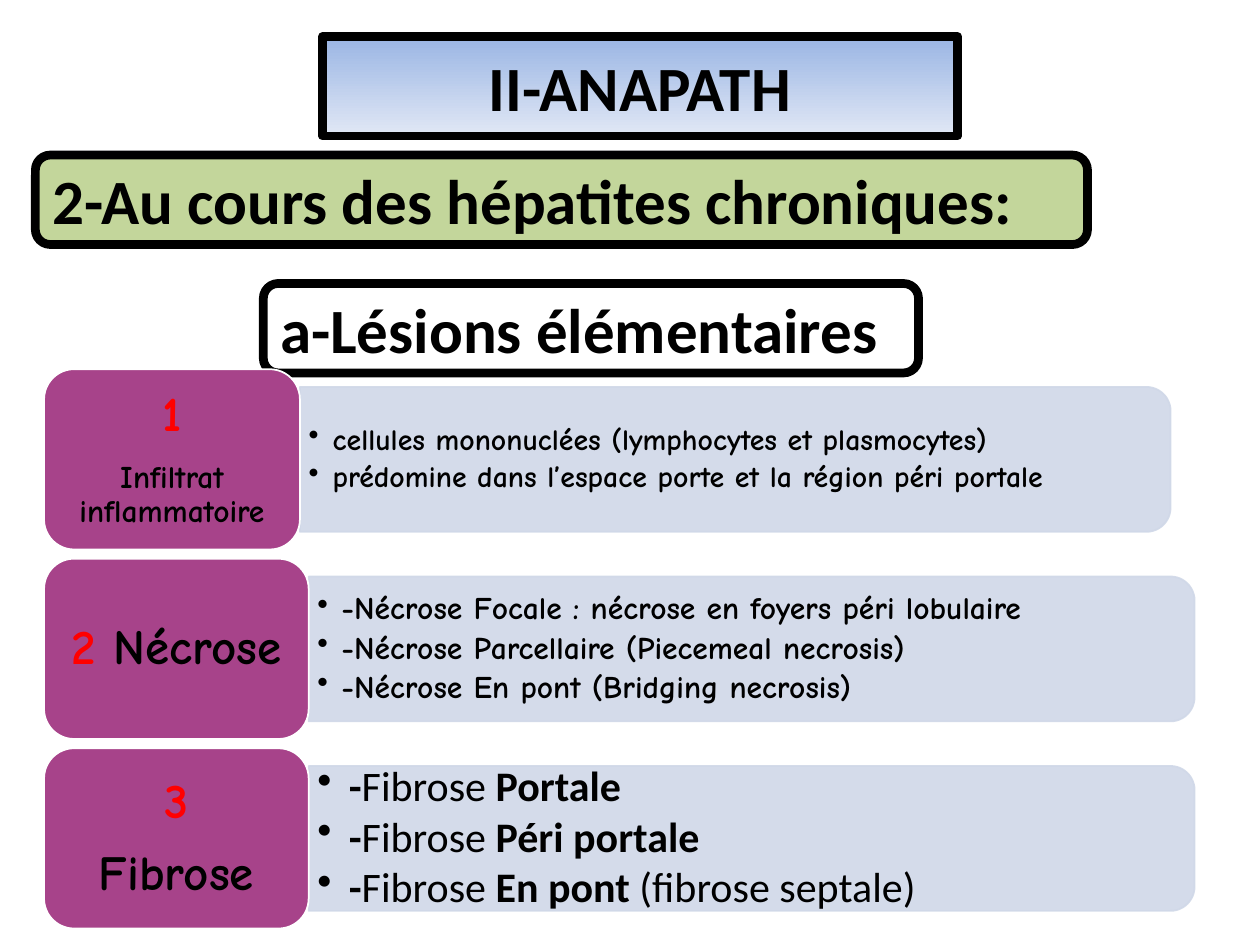
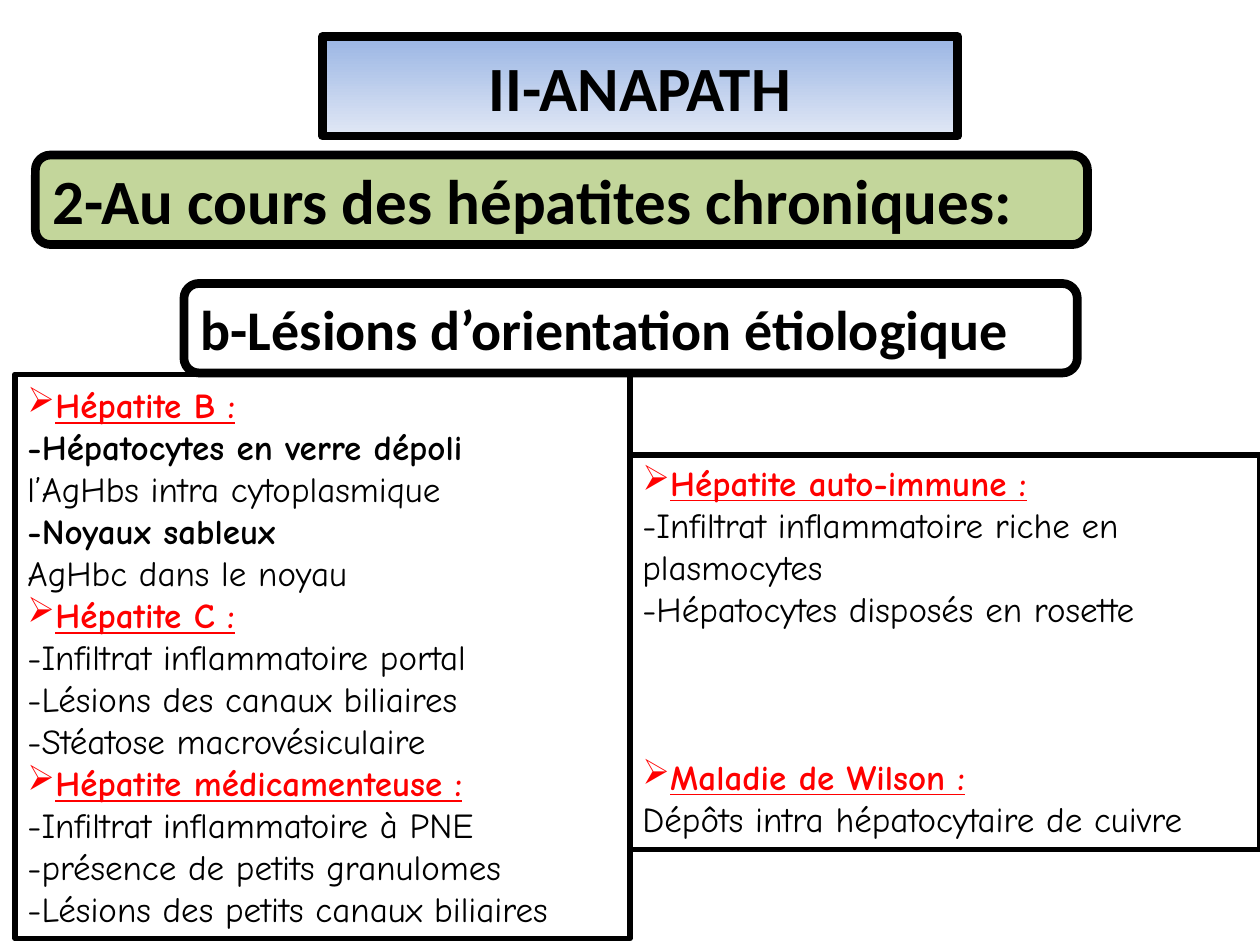
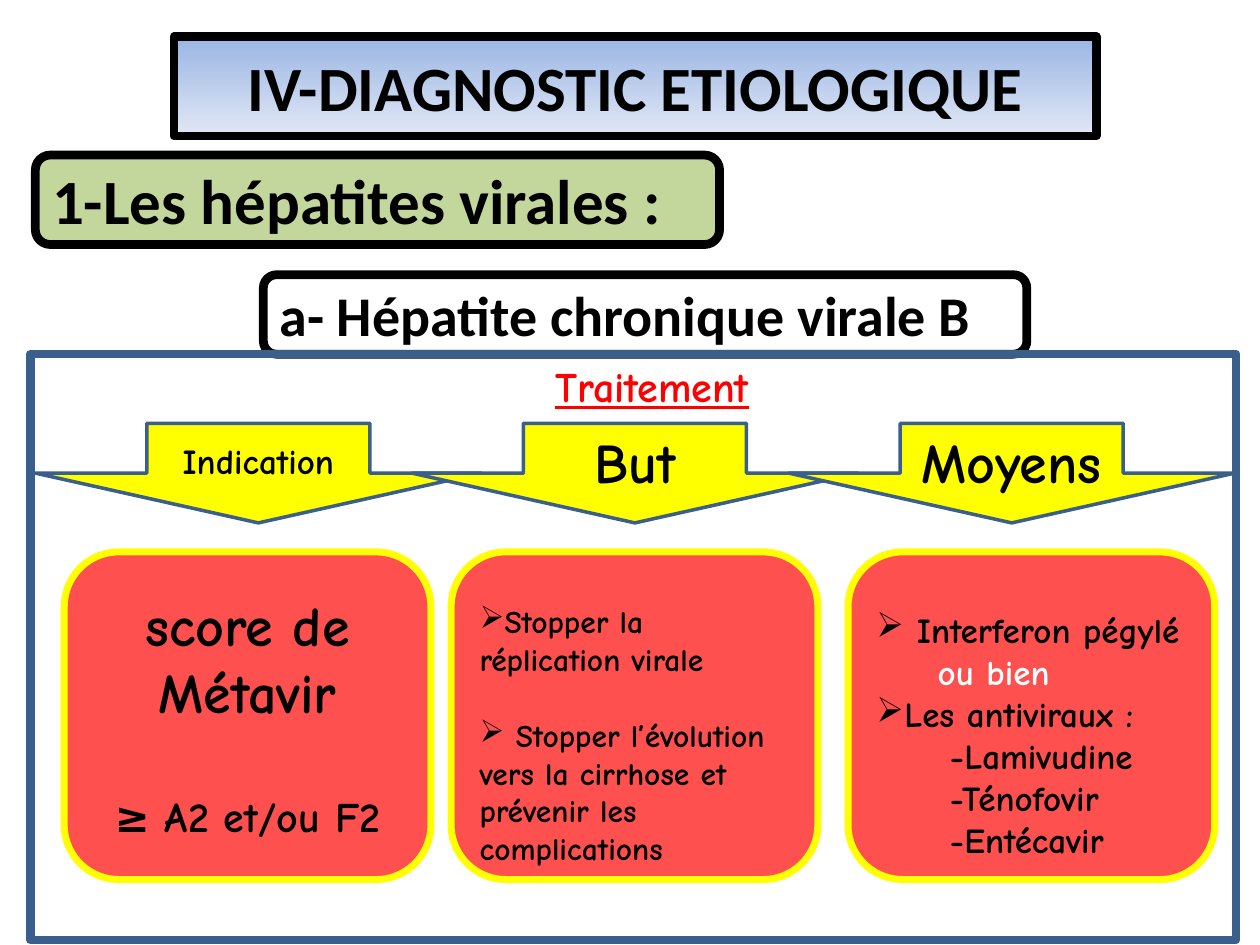
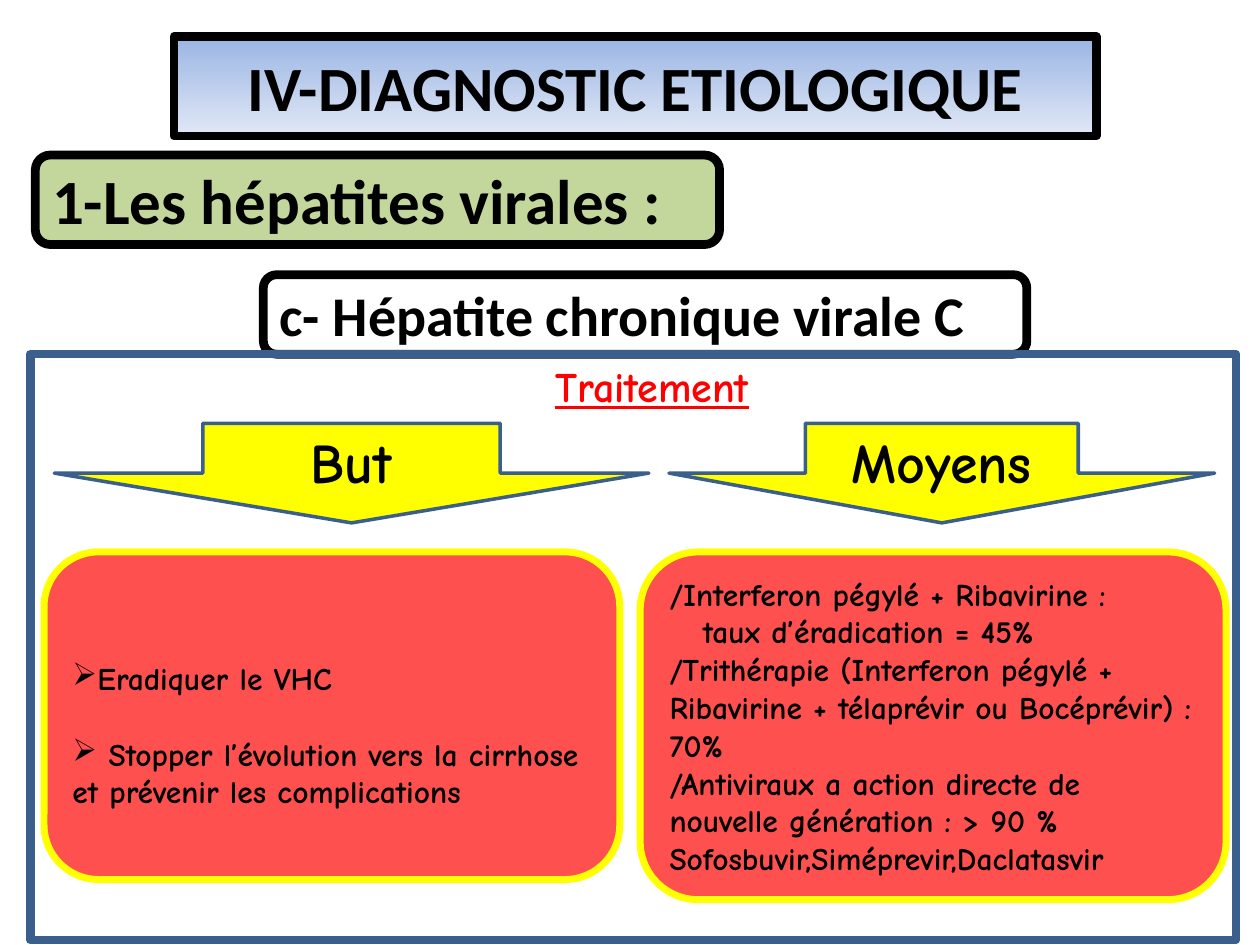
from dataclasses import dataclass
from typing import Optional

import lxml.etree
import pptx
import pptx.dml.color
import pptx.enum.shapes
import pptx.enum.text
import pptx.oxml.ns
import pptx.util

Pt = pptx.util.Pt
qn = pptx.oxml.ns.qn
Geometry = pptx.enum.shapes.MSO_SHAPE
Align = pptx.enum.text.PP_ALIGN
Anchor = pptx.enum.text.MSO_ANCHOR


@dataclass(frozen=True)
class Theme:
    heading_font: str = "Calibri"
    body_font: str = "Comic Neue"
    black: str = "000000"
    white: str = "FFFFFF"
    red: str = "FF0000"
    title_top: str = "9AB5E4"
    title_bottom: str = "E1E8F5"
    section: str = "C3D69B"
    label: str = "A7438A"
    panel: str = "D0D8E8"
    frame: str = "3A5F8C"
    arrow: str = "FFFF00"
    card: str = "FF5050"
    title_size: float = 36
    large: float = 32
    number: float = 28
    medium: float = 24
    body: float = 20
    small: float = 18
    smallest: float = 17


THEME = Theme()


@dataclass(frozen=True)
class Span:
    text: str
    size: float = THEME.body
    color: str = THEME.black
    bold: bool = True
    underline: bool = False
    font: str = THEME.body_font


@dataclass(frozen=True)
class Line:
    spans: tuple[Span, ...]
    bullet: str = ""
    indent: float = 0
    hang: float = 0
    before: float = 0
    after: float = 0
    spacing: float = 1
    align: Align = Align.LEFT


@dataclass(frozen=True)
class Box:
    left: float
    top: float
    width: float
    height: float


@dataclass(frozen=True)
class Band:
    text: str
    box: Box
    size: float = THEME.title_size


@dataclass(frozen=True)
class Lesion:
    label_width: float
    panel_width: float
    label: tuple[Line, ...]
    details: tuple[Line, ...]


@dataclass(frozen=True)
class Treatment:
    heading: str
    arrow_left: float
    arrow_width: float
    card_left: float
    card_width: float
    lines: tuple[Line, ...]
    heading_size: float = THEME.large
    card_height: float = 187.2
    top_inset: float = 25.2


def rgb(color: str) -> pptx.dml.color.RGBColor:
    return pptx.dml.color.RGBColor.from_string(color)


def write(shape, lines: tuple[Line, ...], anchor=Anchor.MIDDLE,
          insets: tuple[float, float, float, float] = (7.2, 3.6, 7.2, 3.6)) -> None:
    frame = shape.text_frame
    frame.word_wrap = True
    frame.auto_size = pptx.enum.text.MSO_AUTO_SIZE.NONE
    frame.vertical_anchor = anchor
    (frame.margin_left, frame.margin_top,
     frame.margin_right, frame.margin_bottom) = map(Pt, insets)
    frame.text = "\n".join(line.spans[0].text for line in lines)
    for paragraph, line in zip(frame.paragraphs, lines):
        properties = paragraph._p.get_or_add_pPr()
        properties.set("marL", str(Pt(line.indent)))
        properties.set("indent", str(Pt(-line.hang)))
        if line.bullet:
            lxml.etree.SubElement(properties, qn("a:buChar")).set("char", line.bullet)
        paragraph.alignment = line.align
        paragraph.line_spacing = line.spacing
        paragraph.space_before = Pt(line.before)
        paragraph.space_after = Pt(line.after)
        for span in line.spans[1:]:
            paragraph.add_run().text = span.text
        for run, span in zip(paragraph.runs, line.spans):
            run.font.name = span.font
            run.font.size = Pt(span.size)
            run.font.bold = span.bold
            run.font.underline = span.underline
            run.font.color.rgb = rgb(span.color)


def outline(shape, color: str, width: float) -> None:
    shape.line.color.rgb = rgb(color)
    shape.line.width = Pt(width)


def draw(slide, geometry, box: Box, fill: Optional[str], line: str, width: float):
    shape = slide.shapes.add_shape(
        geometry, Pt(box.left), Pt(box.top), Pt(box.width), Pt(box.height))
    shape.shadow.inherit = False
    if fill:
        shape.fill.solid()
        shape.fill.fore_color.rgb = rgb(fill)
    else:
        shape.fill.background()
    outline(shape, line, width)
    return shape


def add_text(slide, box: Box, lines: tuple[Line, ...], anchor=Anchor.MIDDLE,
             insets: tuple[float, float, float, float] = (7.2, 3.6, 7.2, 3.6)) -> None:
    area = slide.shapes.add_textbox(
        Pt(box.left), Pt(box.top), Pt(box.width), Pt(box.height))
    write(area, lines, anchor, insets)


def heading_line(text: str, size: float, align=Align.LEFT) -> Line:
    return Line((Span(text, size, font=THEME.heading_font),), align=align)


def add_band(slide, band: Band, fill: Optional[str] = None) -> None:
    shape = draw(slide, Geometry.ROUNDED_RECTANGLE, band.box, fill, THEME.black, 5)
    write(shape, (heading_line(band.text, band.size),))


def add_title(slide, band: Band) -> None:
    title = slide.shapes.title
    title.left, title.top = Pt(band.box.left), Pt(band.box.top)
    title.width, title.height = Pt(band.box.width), Pt(band.box.height)
    geometry = lxml.etree.SubElement(title.element.spPr, qn("a:prstGeom"), prst="roundRect")
    lxml.etree.SubElement(geometry, qn("a:avLst"))
    title.fill.gradient()
    title.fill.gradient_angle = 270
    for stop, color in zip(title.fill.gradient_stops, (THEME.title_top, THEME.title_bottom)):
        stop.color.rgb = rgb(color)
    outline(title, THEME.black, 5)
    write(title, (heading_line(band.text, band.size, Align.CENTER),))


def start_slide(deck, chapter: Band, section: Band, topic: Band):
    slide = deck.slides.add_slide(deck.slide_layouts[5])
    add_title(slide, chapter)
    add_band(slide, section, THEME.section)
    add_band(slide, topic)
    return slide


def label_line(*spans: Span) -> Line:
    return Line(spans, after=11, spacing=0.9, align=Align.CENTER)


def detail(*spans: Span, hang: float = 13.7) -> Line:
    return Line(spans, "•", hang, hang, after=3, spacing=0.9)


def fibrosis(kind: str, remark: str = "") -> Line:
    parts = (("-", True), ("Fibrose ", False), (kind, True), (remark, False))
    return detail(*(Span(text, THEME.medium, bold=bold, font=THEME.heading_font)
                    for text, bold in parts if text), hang=18)


def disease(text: str, before: float = 0) -> Line:
    return Line((Span(text, color=THEME.red, underline=True),), "➢", before=before)


def plain(text: str, bold: bool = False) -> Line:
    return Line((Span(text, bold=bold),))


def item(text: str, size: float = THEME.small, bullet: str = "", indent: float = 0,
         before: float = 0, color: str = THEME.black, align=Align.LEFT) -> Line:
    return Line((Span(text, size, color),), bullet, indent, before=before, align=align)


ANAPATH = Band("II-ANAPATH", Box(184.3, 20.9, 362.9, 56.9))
DIAGNOSTIC = Band("IV-DIAGNOSTIC ETIOLOGIQUE", Box(99.4, 20.9, 527, 56.9))
CHRONIC = Band("2-Au cours des hépatites chroniques:", Box(20.2, 88.6, 601.2, 51.1))
VIRAL = Band("1-Les hépatites virales :", Box(20.2, 88.6, 391, 51.1))
VIRUS_BOX = Box(150.5, 157, 436.3, 45.4)

LESIONS = (
    Lesion(146.2, 497.5,
           (label_line(Span("1", THEME.number, THEME.red)),
            label_line(Span("Infiltrat inflammatoire", THEME.small))),
           (detail(Span("cellules mononuclées (lymphocytes et plasmocytes)", THEME.smallest)),
            detail(Span("prédomine dans l’espace porte et la région péri portale",
                        THEME.smallest)))),
    Lesion(151.2, 506.2,
           (label_line(Span("2 ", THEME.number, THEME.red), Span("Nécrose", THEME.number)),),
           (detail(Span("-Nécrose Focale : nécrose en foyers péri lobulaire", THEME.small)),
            detail(Span("-Nécrose Parcellaire (Piecemeal necrosis)", THEME.small)),
            detail(Span("-Nécrose En pont (Bridging necrosis)", THEME.small)))),
    Lesion(151.2, 506.2,
           (label_line(Span("3", THEME.number, THEME.red)),
            label_line(Span("Fibrose", THEME.number))),
           (fibrosis("Portale"), fibrosis("Péri portale"),
            fibrosis("En pont", " (fibrose septale)"))),
)

COMMON_CAUSES = (
    disease("Hépatite B :"),
    plain("-Hépatocytes en verre dépoli", True),
    plain("l’AgHbs intra cytoplasmique"),
    plain("-Noyaux sableux", True),
    plain("AgHbc dans le noyau"),
    disease("Hépatite C :"),
    plain("-Infiltrat inflammatoire portal"),
    plain("-Lésions des canaux biliaires"),
    plain("-Stéatose macrovésiculaire"),
    disease("Hépatite médicamenteuse :"),
    plain("-Infiltrat inflammatoire à PNE"),
    plain("-présence de petits granulomes"),
    plain("-Lésions des petits canaux biliaires"),
)

OTHER_CAUSES = (
    disease("Hépatite auto-immune :"),
    plain("-Infiltrat inflammatoire riche en plasmocytes"),
    plain("-Hépatocytes disposés en rosette"),
    disease("Maladie de Wilson :", before=72),
    plain("Dépôts intra hépatocytaire de cuivre"),
)

STOP_EVOLUTION = item(" Stopper l’évolution vers la cirrhose et prévenir les complications",
                      bullet="➢", before=21.6)

HEPATITIS_B = (
    Treatment("Indication", 20.2, 254.9, 36.7, 209.5,
              (item("score de Métavir", THEME.large, align=Align.CENTER),
               item("≥ A2 et/ou F2", THEME.medium, before=38, align=Align.CENTER)),
              heading_size=THEME.body, top_inset=3.6),
    Treatment("But", 235.4, 254.9, 257.8, 209.5,
              (item("Stopper la réplication virale", bullet="➢"), STOP_EVOLUTION)),
    Treatment("Moyens", 450.7, 254.9, 484.6, 209.5,
              (item(" Interferon pégylé", THEME.body, "➢"),
               item("ou bien", THEME.body, indent=35, color=THEME.white),
               item("Les antiviraux :", THEME.body, "➢"),
               *(item(drug, THEME.body, indent=42)
                 for drug in ("-Lamivudine", "-Ténofovir", "-Entécavir")))),
)

HEPATITIS_C = (
    Treatment("But", 31, 339.8, 25.2, 329,
              (item("Eradiquer le VHC", bullet="➢"), STOP_EVOLUTION)),
    Treatment("Moyens", 382.3, 311.8, 365.8, 334.8,
              (item("/Interferon pégylé + Ribavirine :"),
               item("taux d’éradication = 45%", indent=19),
               item("/Trithérapie (Interferon pégylé + Ribavirine + télaprévir "
                    "ou Bocéprévir) : 70%"),
               item("/Antiviraux a action directe de nouvelle génération : > 90 %"),
               item("Sofosbuvir,Siméprevir,Daclatasvir")),
              card_height=198.7, top_inset=3.6),
)


def add_lesion(slide, lesion: Lesion, top: float) -> None:
    label_left, label_height, panel_height = 25.2, 103, 82.8
    panel_left = label_left + lesion.label_width
    middle = top + label_height / 2
    panel_box = Box(panel_left + (lesion.panel_width - panel_height) / 2,
                    middle - lesion.panel_width / 2, panel_height, lesion.panel_width)
    panel = draw(slide, Geometry.ROUND_2_SAME_RECTANGLE, panel_box, THEME.panel, THEME.panel, 1)
    panel.rotation = 90
    for color in panel.element.spPr.iter(qn("a:srgbClr")):
        lxml.etree.SubElement(color, qn("a:alpha")).set("val", "90000")
    add_text(slide, Box(panel_left, top + 14.4, lesion.panel_width - 4.3, 74.2),
             lesion.details, insets=(5, 2.9, 5, 2.9))
    label = draw(slide, Geometry.ROUNDED_RECTANGLE,
                 Box(label_left, top, lesion.label_width, label_height),
                 THEME.label, THEME.white, 1)
    write(label, lesion.label, insets=(8.6, 4.3, 8.6, 4.3))


def add_treatments(slide, treatments: tuple[Treatment, ...]) -> None:
    draw(slide, Geometry.RECTANGLE, Box(17.3, 202.3, 689, 334.8), None, THEME.frame, 5)
    caption = Span("Traitement", THEME.medium, THEME.red, underline=True)
    add_text(slide, Box(25.2, 202.3, 694.8, 36),
             (Line((caption,), align=Align.CENTER),), Anchor.TOP)
    for step in treatments:
        arrow = draw(slide, Geometry.DOWN_ARROW,
                     Box(step.arrow_left, 241.9, step.arrow_width, 56.9),
                     THEME.arrow, THEME.frame, 2)
        write(arrow, (item(step.heading, step.heading_size, align=Align.CENTER),))
        card = draw(slide, Geometry.ROUNDED_RECTANGLE,
                    Box(step.card_left, 315.4, step.card_width, step.card_height),
                    THEME.card, THEME.arrow, 4)
        write(card, step.lines, insets=(7.2, step.top_inset, 7.2, 3.6))


def add_elementary_lesions(deck) -> None:
    topic = Band("a-Lésions élémentaires", Box(150.5, 162, 374.4, 51.1))
    slide = start_slide(deck, ANAPATH, CHRONIC, topic)
    for row, lesion in enumerate(LESIONS):
        add_lesion(slide, lesion, 211 + row * 108.3)


def add_causal_lesions(deck) -> None:
    topic = Band("b-Lésions d’orientation étiologique",
                 Box(105.1, 162, 510.5, 51.1), THEME.large)
    slide = start_slide(deck, ANAPATH, CHRONIC, topic)
    for box, lines, anchor in (
        (Box(8.6, 213.8, 351.4, 322.6), COMMON_CAUSES, Anchor.MIDDLE),
        (Box(360, 260, 360, 225.4), OTHER_CAUSES, Anchor.TOP),
    ):
        write(draw(slide, Geometry.RECTANGLE, box, None, THEME.black, 3), lines, anchor)


def main() -> None:
    deck = pptx.Presentation()
    deck.slide_width, deck.slide_height = Pt(720), Pt(540)
    add_elementary_lesions(deck)
    add_causal_lesions(deck)
    for virus, treatments in (("a- Hépatite chronique virale B", HEPATITIS_B),
                              ("c- Hépatite chronique virale C", HEPATITIS_C)):
        slide = start_slide(deck, DIAGNOSTIC, VIRAL, Band(virus, VIRUS_BOX, THEME.large))
        add_treatments(slide, treatments)
    deck.save("out.pptx")


if __name__ == "__main__":
    main()
